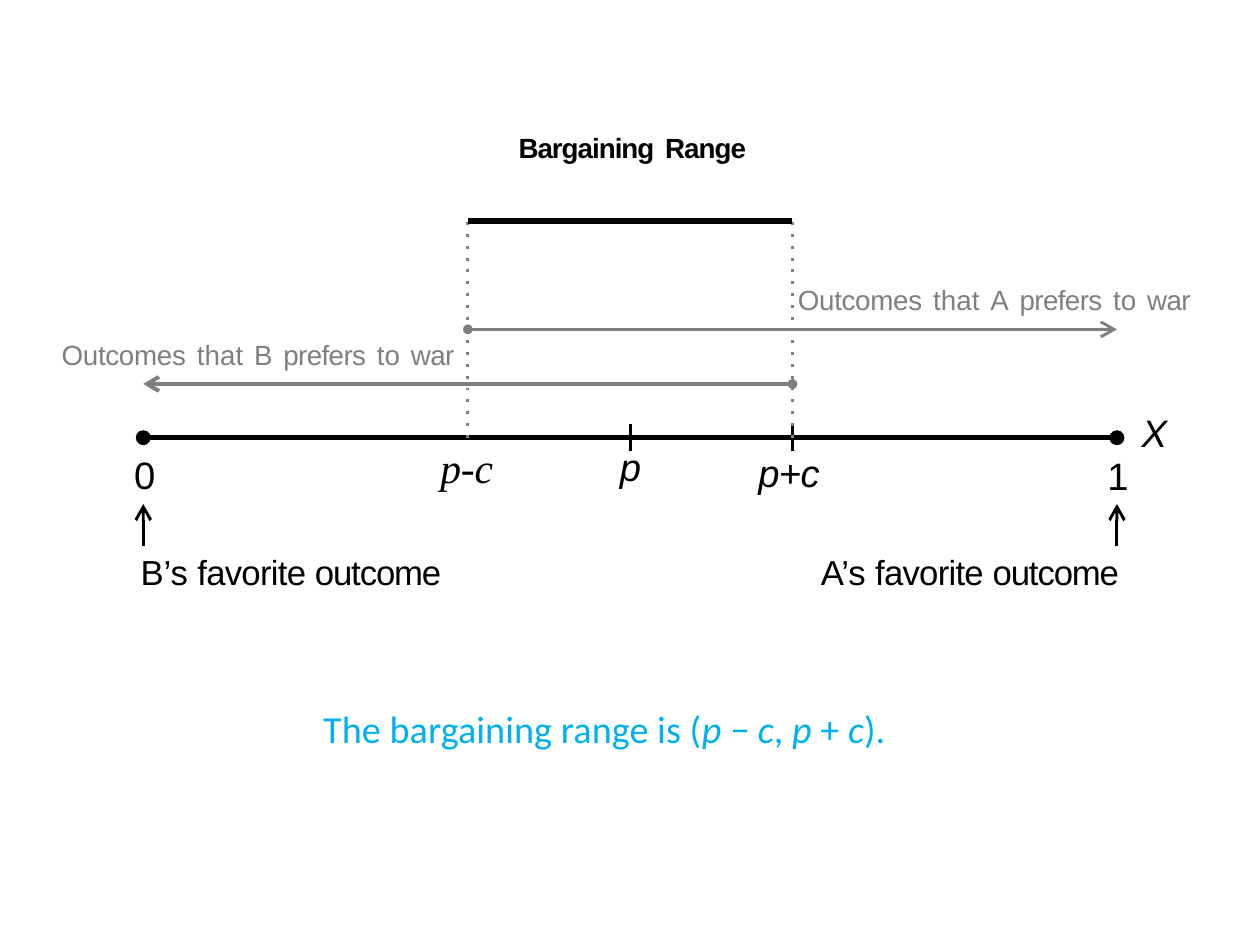
import dataclasses

import lxml.etree
import pptx
import pptx.dml.color
import pptx.enum.shapes
import pptx.enum.text
import pptx.oxml.ns
import pptx.util

Pt = pptx.util.Pt
qn = pptx.oxml.ns.qn


@dataclasses.dataclass
class Style:
    size: float
    color: str
    font: str = "Arial"
    bold: bool = False
    italic: bool = False
    spacing: float = 0

    def but(self, **changes):
        return dataclasses.replace(self, **changes)


@dataclasses.dataclass
class Theme:
    black: str = "000000"
    gray: str = "7F7F7F"
    blue: str = "00B0F0"
    thin: float = 0.85
    medium: float = 1.13
    axis: float = 1.42
    thick: float = 1.7
    end_dot: float = 4.3
    small_dot: float = 2.8
    word_gap: float = 0.85

    def __post_init__(self):
        self.number = Style(11, self.black, spacing=-0.5)
        self.variable = self.number.but(italic=True)
        self.serif = self.variable.but(size=12, font="Times New Roman")
        self.outcome = Style(10, self.black)
        self.preference = Style(8, self.gray)
        self.title = Style(8, self.black, bold=True, spacing=-0.3)
        self.conclusion = Style(11, self.blue, font="Calibri")


THEME = Theme()
P = 1 / 2
C = 1 / 6


@dataclasses.dataclass
class Box:
    left: float
    top: float
    width: float
    height: float

    def x(self, value):
        """Horizontal place of a value on the 0 to 1 scale."""
        return self.left + value * self.width

    @property
    def bottom(self):
        return self.top + self.height


def rgb(color):
    return pptx.dml.color.RGBColor.from_string(color)


def spread_words(words):
    """Join (word, style) pairs with widened spaces."""
    runs = []
    for word, style in words:
        if runs:
            runs.append((" ", style.but(spacing=THEME.word_gap)))
        runs.append((word, style))
    return runs


def add_label(slide, left, top, width, height, *paragraphs, line_spacing=None):
    """Each paragraph is an indent and a list of (text, style) runs."""
    frame = slide.shapes.add_textbox(Pt(left), Pt(top), Pt(width), Pt(height)).text_frame
    frame.word_wrap = True
    frame.auto_size = pptx.enum.text.MSO_AUTO_SIZE.SHAPE_TO_FIT_TEXT
    frame.margin_left = frame.margin_top = Pt(0.9)
    frame.margin_right = frame.margin_bottom = 0
    for index, (indent, runs) in enumerate(paragraphs):
        paragraph = frame.add_paragraph() if index else frame.paragraphs[0]
        paragraph.space_before = Pt(0 if index else 0.9)
        if line_spacing:
            paragraph.line_spacing = Pt(line_spacing)
        if indent:
            paragraph._p.get_or_add_pPr().set("marL", str(Pt(indent)))
        for text, style in runs:
            run = paragraph.add_run()
            run.text = text
            run.font.name = style.font
            run.font.size = Pt(style.size)
            run.font.bold = style.bold
            run.font.italic = style.italic
            run.font.color.rgb = rgb(style.color)
            run.font._element.set("spc", str(round(style.spacing * 100)))


def add_line(slide, start, end, color, weight, dotted=False, arrow=False):
    connector = slide.shapes.add_connector(
        pptx.enum.shapes.MSO_CONNECTOR.STRAIGHT, *(Pt(value) for value in (*start, *end)))
    connector.line.color.rgb = rgb(color)
    connector.line.width = Pt(weight)
    properties = connector.element.spPr
    outline = properties.find(qn("a:ln"))
    if dotted:
        lxml.etree.SubElement(outline, qn("a:prstDash"), val="dot")
    if arrow:
        lxml.etree.SubElement(outline, qn("a:tailEnd"), type="arrow", w="sm", len="sm")
    lxml.etree.SubElement(properties, qn("a:effectLst"))


def add_dot(slide, x, y, diameter, color):
    dot = slide.shapes.add_shape(
        pptx.enum.shapes.MSO_SHAPE.OVAL,
        Pt(x - diameter / 2), Pt(y - diameter / 2), Pt(diameter), Pt(diameter))
    dot.shadow.inherit = False
    dot.fill.solid()
    dot.fill.fore_color.rgb = rgb(color)
    dot.line.fill.background()


def draw_axis(slide, box):
    y = box.top
    add_line(slide, (box.x(0), y), (box.x(1), y), THEME.black, THEME.axis)
    for value in (0, 1):
        add_dot(slide, box.x(value), y, THEME.end_dot, THEME.black)
    for value in (P, P + C):
        add_line(slide, (box.x(value), y + 3.9), (box.x(value), y - 3.9),
                 THEME.black, THEME.thin)
    # Value labels: scale value, horizontal and vertical shift, width, runs
    labels = [
        (0, -3.5, 3, 9, [("0", THEME.number)]),
        (P - C, -8.8, 0.3, 19, [("p-", THEME.serif.but(spacing=-0.1)), ("c", THEME.serif)]),
        (P, -3.9, 0.6, 10, [("p", THEME.variable)]),
        (P + C, -10.7, 2.3, 23, [("p+c", THEME.variable.but(spacing=-0.2))]),
    ]
    for value, shift, drop, width, runs in labels:
        add_label(slide, box.x(value) + shift, y + drop, width, 15, (0, runs))
    add_label(slide, box.x(1) - 3.6, y - 8, 20, 26,
              (9.8, [("X", THEME.variable)]), (0, [("1", THEME.number)]), line_spacing=12.2)


def draw_favorites(slide, box):
    for actor, value, shift in (("B", 0, -1.7), ("A", 1, -86.2)):
        x = box.x(value)
        add_line(slide, (x, box.bottom), (x, box.top), THEME.black, THEME.thin, arrow=True)
        style = THEME.outcome
        add_label(slide, x + shift, box.bottom + 0.3, 91, 13.7, (0, [
            (f"{actor}’s ", style),
            ("favorite ", style.but(spacing=-0.2)),
            ("outcome", style.but(spacing=-0.3))]))


def draw_preferences(slide, box):
    rows = [("A", P - C, 1, box.top, THEME.thin, box.x(P + C) + 0.7),
            ("B", P + C, 0, box.bottom, THEME.medium, box.left - 24.4)]
    for actor, start, end, y, weight, label_left in rows:
        add_line(slide, (box.x(start), y), (box.x(end), y), THEME.gray, weight, arrow=True)
        add_dot(slide, box.x(start), y, THEME.small_dot, THEME.gray)
        style = THEME.preference
        tight = style.but(spacing=-0.2)
        add_label(slide, label_left, y - 14.2, 117, 11.5, (0, spread_words([
            ("Outcomes", style.but(spacing=-0.1)), ("that", style), (actor, style),
            ("prefers", tight), ("to", style), ("war", tight)])))


def draw_bargaining_range(slide, box):
    low, high = box.x(P - C), box.x(P + C)
    for x in (low, high):
        add_line(slide, (x, box.bottom), (x, box.top), THEME.gray, THEME.thin, dotted=True)
    add_line(slide, (low, box.top), (high, box.top), THEME.black, THEME.thick)
    add_label(slide, low + 13.7, box.top - 26.9, 69, 11.5, (0, spread_words(
        [("Bargaining", THEME.title), ("Range", THEME.title)])))


def draw_conclusion(slide, box):
    plain = THEME.conclusion
    italic = plain.but(italic=True)
    add_label(slide, box.left, box.top, box.width, box.height, (0, [
        ("The bargaining range is (", plain), ("p − c", italic), (", ", plain),
        ("p ", italic), ("+ ", plain), ("c", italic), (").", plain)]))


def main():
    presentation = pptx.Presentation()
    presentation.slide_width = Pt(363)
    presentation.slide_height = Pt(272.5)
    slide = presentation.slides.add_slide(presentation.slide_layouts[6])

    # Regions share the horizontal scale of the axis
    left, width, axis_top, range_top = 41.3, 280.5, 126.1, 63.8
    draw_axis(slide, Box(left, axis_top, width, 18))
    draw_favorites(slide, Box(left, 145.2, width, 12.2))
    draw_preferences(slide, Box(left, 94.9, width, 15.7))
    draw_bargaining_range(slide, Box(left, range_top, width, axis_top - range_top))
    draw_conclusion(slide, Box(92.2, 202.3, 178.6, 14.4))

    presentation.save("out.pptx")


if __name__ == "__main__":
    main()
